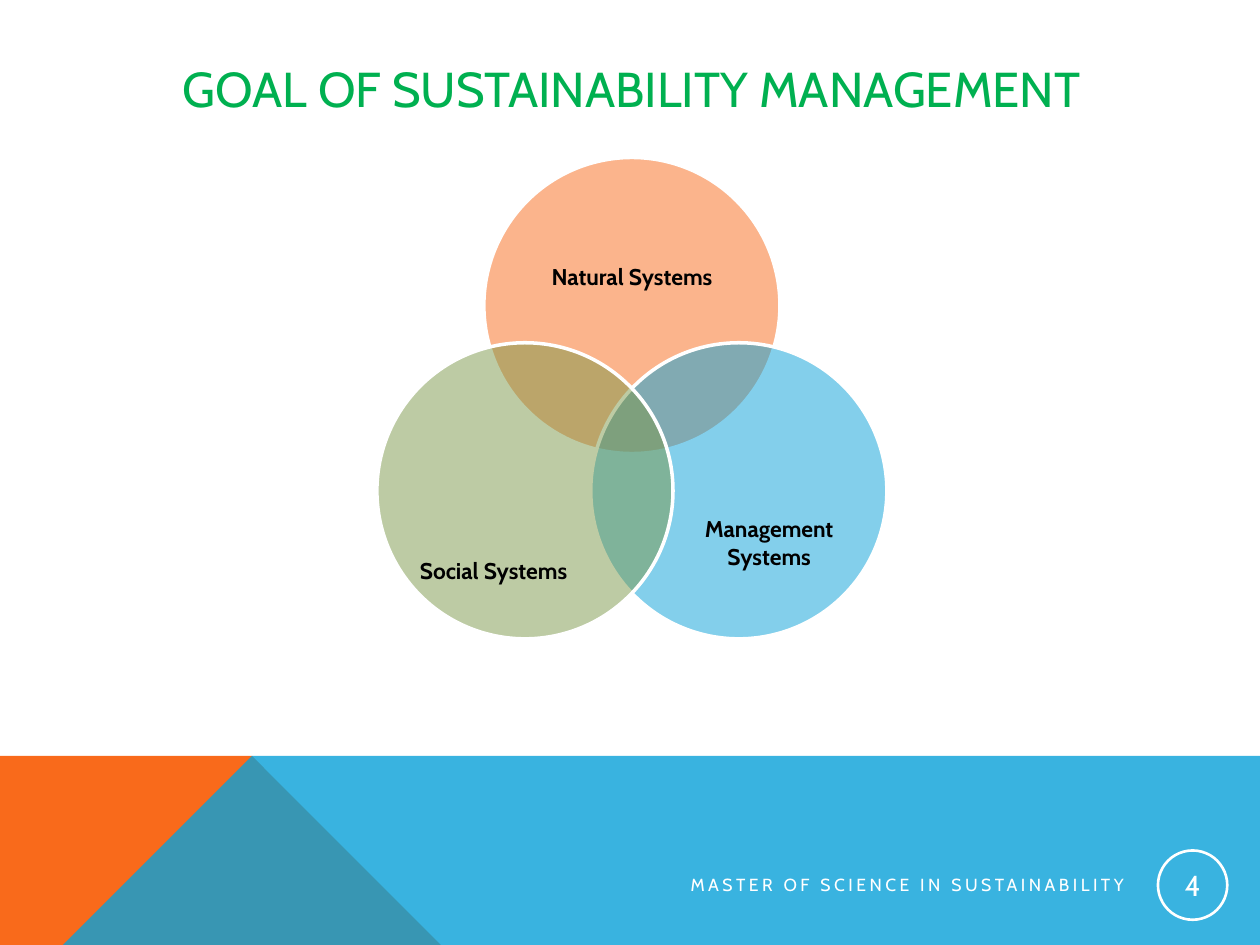
from dataclasses import dataclass
from math import cos, radians, sin

from lxml import etree
from pptx import Presentation
from pptx import util as u
from pptx.dml.color import RGBColor
from pptx.enum import shapes, text
from pptx.oxml.ns import qn

W, H = 10, 7.5
FONT = "Cabin"
WHITE, BLACK, GREEN = "FFFFFF", "000000", "00B050"
ORANGE, BLUE, OLIVE = "F96A1B", "08A1D9", "7C984A"

BAND_TOP, PEAK_X, FOOT_X = 5.52, 2.23, 3.91
VENN_X, VENN_Y, VENN_ORBIT, DIAMETER = 5.015, 3.405, 0.98, 2.35
LABEL_W, LABEL_H = 1.72, 0.6


@dataclass
class Circle:
    lines: tuple[str, ...]
    color: str
    angle: float
    label_x: float  # label centre, measured from the circle's centre
    label_y: float


@dataclass
class Band:
    color: str
    opacity: int
    points: list[tuple[float, float]]


CIRCLES = [
    Circle(("Natural Systems",), ORANGE, -90, 0, -0.23),
    Circle(("Management", "Systems"), BLUE, 30, 0.24, 0.41),
    Circle(("Social Systems",), OLIVE, 150, -0.25, 0.63),
]
BANDS = [
    Band(ORANGE, 100, [(0, H), (0, BAND_TOP), (PEAK_X, BAND_TOP), (FOOT_X, H)]),
    Band(BLUE, 80, [(0, H), (PEAK_X, BAND_TOP), (W, BAND_TOP), (W, H)]),
]


def rgb(color: str) -> RGBColor:
    return RGBColor.from_string(color)


def box(x: float, y: float, w: float, h: float) -> list[u.Emu]:
    return [u.Inches(v) for v in (x, y, w, h)]


def fill(sp, color: str, opacity: int = 100) -> None:
    sp.fill.solid()
    sp.fill.fore_color.rgb = rgb(color)
    if opacity < 100:
        clr = sp.fill._xPr.find(qn("a:solidFill"))[0]
        etree.SubElement(clr, qn("a:alpha")).set("val", str(opacity * 1000))


def write(sp, lines: tuple[str, ...], size: float, color: str,
          align=text.PP_ALIGN.CENTER, bold: bool = False,
          inset: float | None = None, spacing: float = 0) -> None:
    tf = sp.text_frame
    tf.word_wrap = True
    tf.auto_size = text.MSO_AUTO_SIZE.NONE
    tf.vertical_anchor = text.MSO_ANCHOR.MIDDLE
    if inset is not None:
        tf.margin_left = tf.margin_right = u.Inches(inset)
        tf.margin_top = tf.margin_bottom = u.Inches(inset)
    for i, line in enumerate(lines):
        p = tf.paragraphs[0] if i == 0 else tf.add_paragraph()
        p.alignment = align
        r = p.add_run()
        r.text = line
        p.font.name, p.font.size, p.font.bold = FONT, u.Pt(size), bold
        p.font.color.rgb = rgb(color)
        if spacing:
            r.font._element.set("spc", str(int(spacing * 100)))


def add_band(slide, band: Band) -> None:
    builder = slide.shapes.build_freeform(*band.points[0], scale=u.Inches(1))
    builder.add_line_segments(band.points[1:], close=True)
    sp = builder.convert_to_shape()
    sp.shadow.inherit = False
    fill(sp, band.color, band.opacity)
    sp.line.fill.background()


def add_ring(slide, x: float, y: float, d: float, weight: float):
    """Add an unfilled circle with a white outline."""
    sp = slide.shapes.add_shape(shapes.MSO_SHAPE.OVAL, *box(x, y, d, d))
    sp.shadow.inherit = False
    sp.fill.background()
    sp.line.color.rgb = rgb(WHITE)
    sp.line.width = u.Pt(weight)
    return sp


def add_circle(slide, c: Circle) -> None:
    x = VENN_X + VENN_ORBIT * cos(radians(c.angle))
    y = VENN_Y + VENN_ORBIT * sin(radians(c.angle))
    sp = add_ring(slide, x - DIAMETER / 2, y - DIAMETER / 2, DIAMETER, 2)
    fill(sp, c.color, 50)
    label = slide.shapes.add_textbox(*box(
        x + c.label_x - LABEL_W / 2, y + c.label_y - LABEL_H / 2,
        LABEL_W, LABEL_H))
    write(label, c.lines, 13, BLACK, bold=True, inset=0)


def main() -> None:
    prs = Presentation()
    prs.slide_width, prs.slide_height = u.Inches(W), u.Inches(H)
    slide = prs.slides.add_slide(prs.slide_layouts[5])

    for band in BANDS:
        add_band(slide, band)

    title = slide.shapes.title
    title.left, title.top, title.width, title.height = box(0.9, 0.4, 8.22, 0.6)
    write(title, ("GOAL OF SUSTAINABILITY MANAGEMENT",), 28, GREEN)

    footer = slide.shapes.add_textbox(*box(3.85, 6.87, 5.17, 0.3))
    write(footer, ("MASTER OF SCIENCE IN SUSTAINABILITY",), 10, WHITE,
          align=text.PP_ALIGN.RIGHT, spacing=2)
    number = add_ring(slide, 9.19, 6.75, 0.55, 1.5)
    write(number, ("4",), 16.5, WHITE, inset=0.01)

    for circle in CIRCLES:
        add_circle(slide, circle)
    prs.save("out.pptx")


if __name__ == "__main__":
    main()
